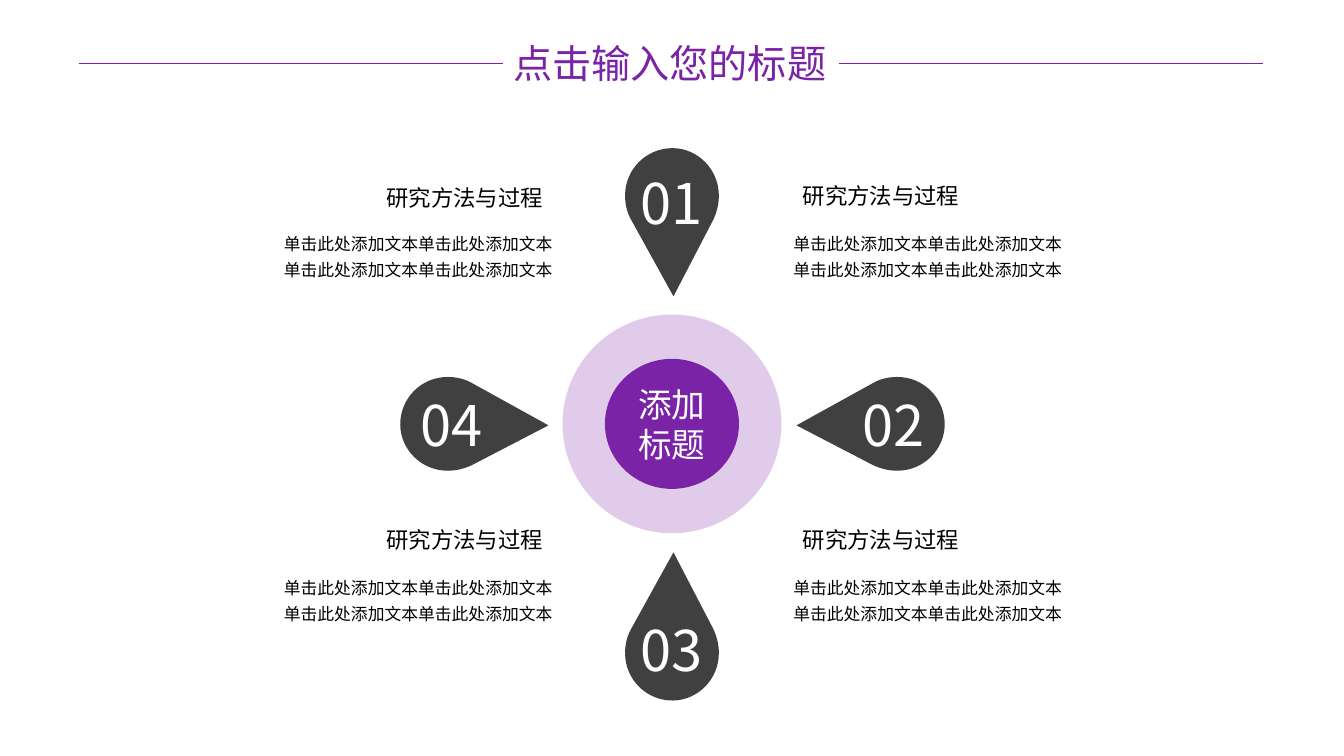
from lxml import etree
from pptx import Presentation
from pptx.dml.color import RGBColor
from pptx.enum.shapes import MSO_CONNECTOR, MSO_SHAPE
from pptx.enum.text import MSO_ANCHOR, PP_ALIGN
from pptx.oxml.ns import qn
from pptx.util import Pt

PX = 9144  # 100 px to the inch
FONT = "Noto Sans CJK SC"
PURPLE, DARK, WHITE, BLACK = "7A23A6", "404040", "FFFFFF", "000000"
LEFT, CENTER, RIGHT = PP_ALIGN.LEFT, PP_ALIGN.CENTER, PP_ALIGN.RIGHT
TOP, MIDDLE = MSO_ANCHOR.TOP, MSO_ANCHOR.MIDDLE
OVAL, STRAIGHT = MSO_SHAPE.OVAL, MSO_CONNECTOR.STRAIGHT


def paint(color_format, color):
    color_format.rgb = RGBColor.from_string(color)


def write(shape, text, size, color, align, anchor=TOP, insets=(10, 5, 10, 5)):
    frame = shape.text_frame
    frame.word_wrap = True
    frame.vertical_anchor = anchor
    (frame.margin_left, frame.margin_top,
     frame.margin_right, frame.margin_bottom) = (inset * PX for inset in insets)
    frame.text = text
    for para in frame.paragraphs:
        para.alignment = align
        for span in para.runs:
            span.font.size = Pt(size)
            paint(span.font.color, color)
            span.font.name = FONT
            # East Asian characters need their own typeface entry
            etree.SubElement(span.font._element, qn("a:ea")).set("typeface", FONT)
    return frame


deck = Presentation()
deck.slide_width, deck.slide_height = 1333 * PX, 750 * PX
page = deck.slides.add_slide(deck.slide_layouts[6])

# Drop outline: (across, along) from the head centre, three points per curve
OUTLINE = [
    (0, -47),
    (25, -47), (46, -26), (46, 0),
    (46, 9), (44, 16), (41, 23),
    (1, 100), (1, 100), (1, 100),
    (-41, 24), (-41, 24), (-41, 24),
    (-45, 17), (-47, 9), (-47, 0),
    (-47, -26), (-26, -47), (0, -47),
]
# Number, head centre, direction of the tip, text placement
drops = [
    ("01", 667, 194, (0, 1), TOP, (10, 20, 10, 5)),
    ("03", 667, 648, (0, -1), TOP, (10, 63, 10, 5)),
    ("02", 890, 421, (-1, 0), MIDDLE, (55, 5, 10, 5)),
    ("04", 444, 421, (1, 0), MIDDLE, (10, 5, 55, 5)),
]
drop_group = page.shapes.add_group_shape()
for number, x, y, (right, down), anchor, insets in drops:
    points = [((x + along * right + across * abs(down)) * PX,
               (y + along * down + across * abs(right)) * PX)
              for across, along in OUTLINE]
    builder = drop_group.shapes.build_freeform(*points[0])
    builder.add_line_segments(points[1:], close=True)
    drop = builder.convert_to_shape()
    # Join each three line points into one Bezier curve
    lines = list(drop._element.iter(qn("a:lnTo")))
    for first in range(0, len(lines), 3):
        curve = etree.Element(qn("a:cubicBezTo"))
        lines[first].addprevious(curve)
        for line in lines[first:first + 3]:
            curve.append(line[0])
            line.getparent().remove(line)
    drop.shadow.inherit = False
    drop.fill.solid()
    paint(drop.fill.fore_color, DARK)
    drop.line.fill.background()
    write(drop, number, 40, WHITE, CENTER, anchor, insets)

# Hub: pale ring behind a solid disc
hub_group = page.shapes.add_group_shape()
for x, y, width, height, opacity in [(558, 312, 217, 217, 23), (600, 356, 133, 129, 100)]:
    disc = hub_group.shapes.add_shape(OVAL, x * PX, y * PX, width * PX, height * PX)
    disc.shadow.inherit = False
    disc.fill.solid()
    paint(disc.fill.fore_color, PURPLE)
    disc.line.fill.background()
    if opacity < 100:
        tint = disc._element.spPr.find(".//" + qn("a:srgbClr"))
        etree.SubElement(tint, qn("a:alpha")).set("val", str(opacity * 1000))
write(disc, "添加标题", 24, WHITE, CENTER, MIDDLE)

# Four captions: two lines of body text and a heading
BODY_LINE = "单击此处添加文本单击此处添加文本"
captions = [
    (364, 183, 193, 223, 58, RIGHT),
    (777, 181, 777, 223, 58, LEFT),
    (364, 522, 193, 564, 58, RIGHT),
    (777, 522, 777, 564, 86, LEFT),
]
for heading_x, heading_y, body_x, body_y, body_height, align in captions:
    box = page.shapes.add_textbox(body_x * PX, body_y * PX, 365 * PX, body_height * PX)
    frame = write(box, BODY_LINE + "\n" + BODY_LINE, 12, BLACK, align)
    upper, lower = frame.paragraphs
    upper.line_spacing, upper.space_before = 1.2, Pt(4)
    lower.line_spacing = 1.3
    box = page.shapes.add_textbox(heading_x * PX, heading_y * PX, 194 * PX, 27 * PX)
    write(box, "研究方法与过程", 16, BLACK, CENTER, insets=(10, 0, 10, 0))

# Slide title between two rules
title_group = page.shapes.add_group_shape()
box = title_group.shapes.add_textbox(499 * PX, 34 * PX, 334 * PX, 57 * PX)
write(box, "点击输入您的标题", 28, PURPLE, LEFT)
for start in (78, 832):
    rule = title_group.shapes.add_connector(
        STRAIGHT, start * PX, 63 * PX, (start + 421) * PX, 63 * PX)
    paint(rule.line.color, PURPLE)
    rule.line.width = Pt(0.5)
    etree.SubElement(rule._element.spPr, qn("a:effectLst"))

deck.save("out.pptx")
